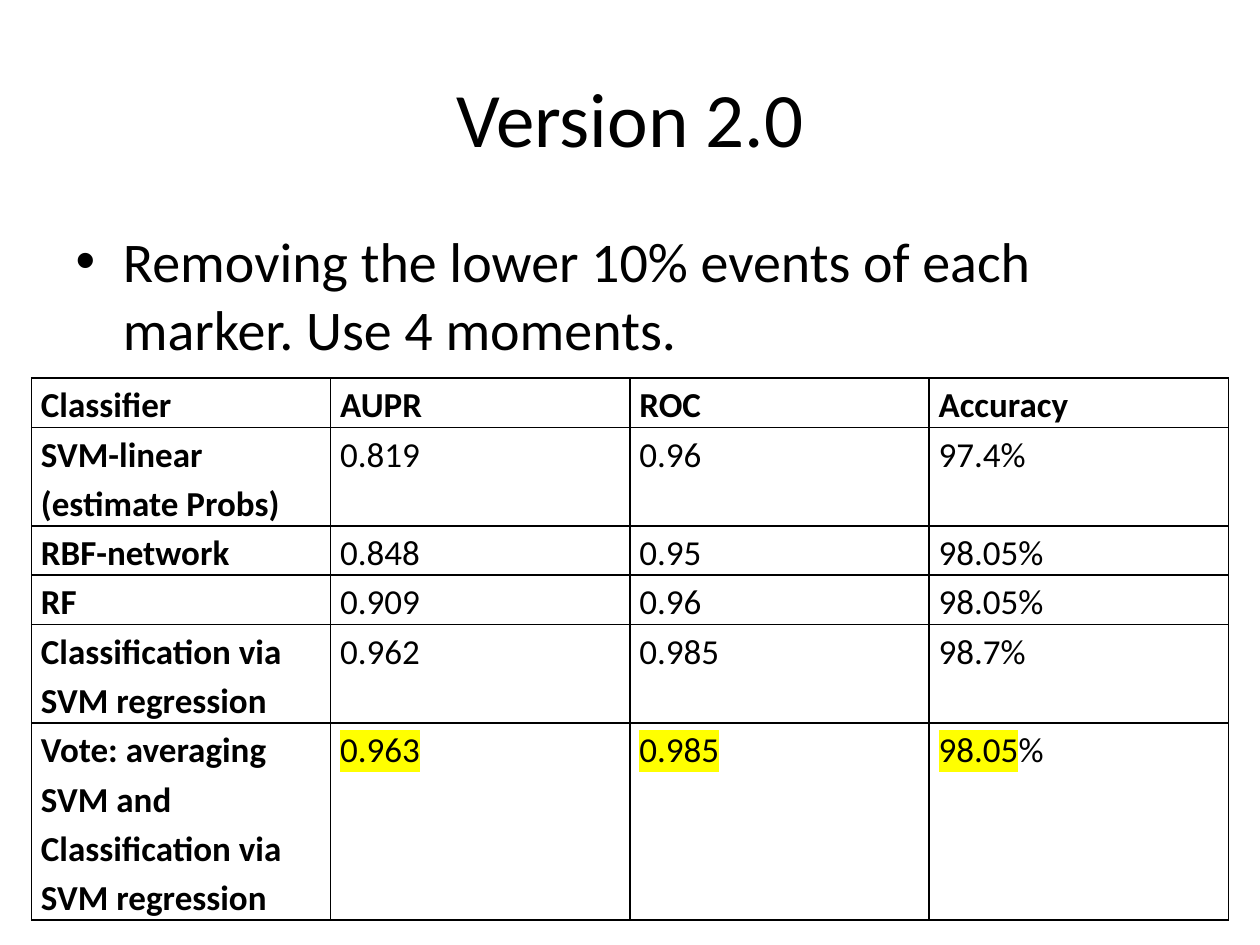
from lxml import etree
from pptx import Presentation
from pptx.dml.color import RGBColor
from pptx.enum.text import MSO_ANCHOR, PP_ALIGN
from pptx.oxml.ns import qn
from pptx.util import Pt

CENTER, LEFT = PP_ALIGN.CENTER, PP_ALIGN.LEFT
MIDDLE, TOP = MSO_ANCHOR.MIDDLE, MSO_ANCHOR.TOP

HEAD = ["Classifier", "AUPR", "ROC", "Accuracy"]
ROWS = [
    ["SVM-linear (estimate Probs)", "0.819", "0.96", "97.4%"],
    ["RBF-network", "0.848", "0.95", "98.05%"],
    ["RF", "0.909", "0.96", "98.05%"],
    ["Classification via SVM regression", "0.962", "0.985", "98.7%"],
    ["Vote: averaging SVM and Classification via SVM regression",
     "0.963", "0.985", "98.05%"],
]
LINES = [1, 2, 1, 1, 2, 4]  # text lines in each table row
LINE = 28.15


def color(code):
    return RGBColor.from_string(code)


class Deck:
    face = "Calibri"
    ink = "000000"
    mark = "FFFF00"

    def __init__(self, wide, high):
        self.file = Presentation()
        self.file.slide_width, self.file.slide_height = Pt(wide), Pt(high)
        self.slide = self.file.slides.add_slide(self.file.slide_layouts[1])
        fill = self.slide.background.fill
        fill.solid()
        fill.fore_color.rgb = color("FFFFFF")

    def style(self, para, size, bold=False, align=LEFT):
        para.alignment = align
        font = para.font
        font.name, font.size, font.bold = self.face, Pt(size), bold
        font.color.rgb = color(self.ink)

    def holder(self, index, text, box, size, align, anchor):
        """Fill and place one of the layout's placeholders."""
        shape = self.slide.placeholders[index]
        shape.left, shape.top, shape.width, shape.height = map(Pt, box)
        frame = shape.text_frame
        frame.text = text
        frame.vertical_anchor = anchor
        self.style(frame.paragraphs[0], size, align=align)

    def border(self, cell):
        props = cell._tc.get_or_add_tcPr()
        for spot, side in enumerate(("lnL", "lnR", "lnT", "lnB")):
            line = etree.Element(qn("a:" + side), w=str(Pt(1)))
            fill = etree.SubElement(line, qn("a:solidFill"))
            etree.SubElement(fill, qn("a:srgbClr"), val=self.ink)
            props.insert(spot, line)

    def light(self, run):
        """Highlight the run."""
        glow = etree.SubElement(run._r.get_or_add_rPr(), qn("a:highlight"))
        etree.SubElement(glow, qn("a:srgbClr"), val=self.mark)

    def cell(self, cell, text, bold, lit):
        cell.margin_left = cell.margin_right = Pt(5.4)
        cell.margin_top = cell.margin_bottom = 0
        cell.fill.background()
        self.border(cell)
        para = cell.text_frame.paragraphs[0]
        para.line_spacing = 1.15
        self.style(para, 20, bold)
        run = para.add_run()
        run.text = text
        if lit:
            self.light(run)
            if text.endswith("%"):
                run.text = text[:-1]
                para.add_run().text = "%"

    def table(self, data, box):
        table = self.slide.shapes.add_table(
            len(data), len(data[0]), *map(Pt, box)).table
        table.first_row = table.horz_banding = False
        for row, count in zip(table.rows, LINES):
            row.height = Pt(LINE * count)
        last = len(data) - 1
        for r, line in enumerate(data):
            for c, text in enumerate(line):
                self.cell(table.cell(r, c), text, bold=r == 0 or c == 0,
                          lit=r == last and c > 0)


def main():
    deck = Deck(720, 540)
    deck.holder(0, "Version 2.0", (36, 21.6, 648, 90), 44, CENTER, MIDDLE)
    deck.holder(1, "Removing the lower 10% events of each marker. "
                "Use 4 moments.", (36, 126, 648, 356.4), 32, LEFT, TOP)
    deck.table([HEAD] + ROWS, (18, 216, 684, LINE * sum(LINES)))
    deck.file.save("out.pptx")


if __name__ == "__main__":
    main()
